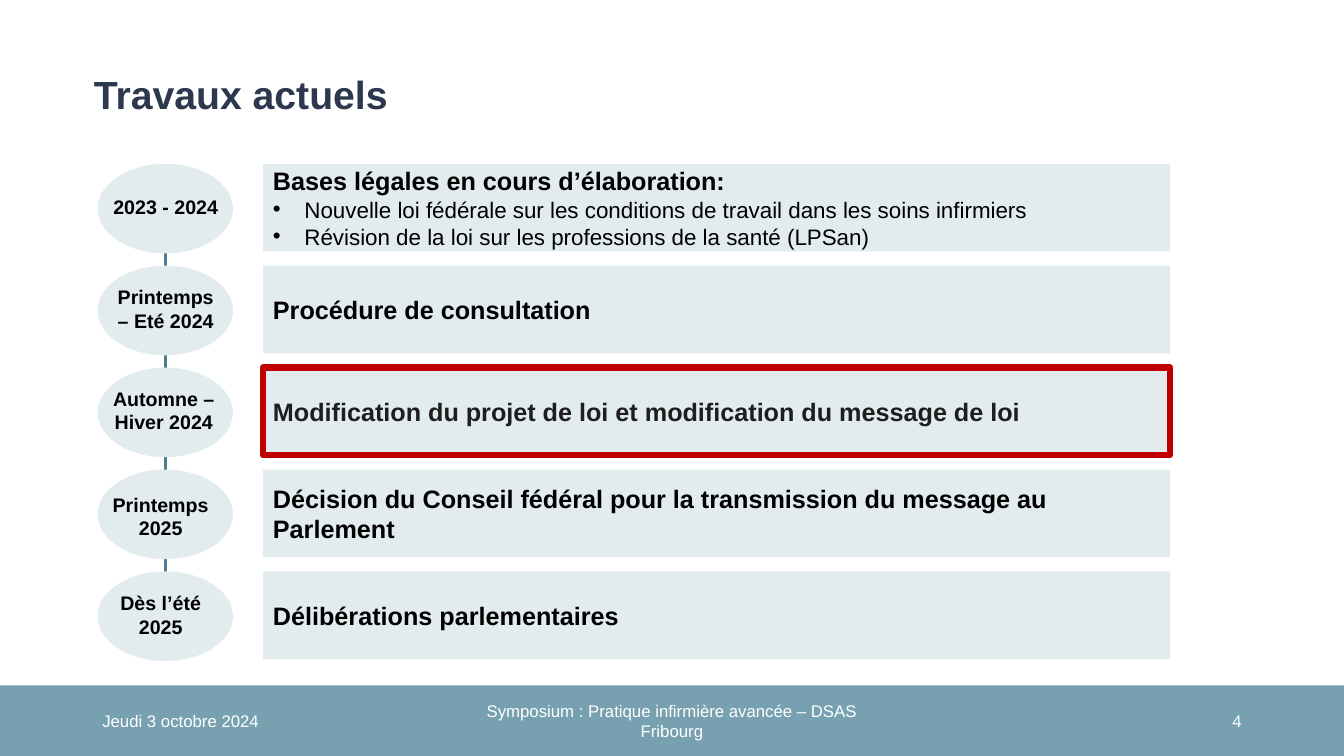
import pptx
import pptx.util
import pptx.dml.color
import pptx.enum.shapes
import pptx.enum.text
import pptx.oxml.ns
from lxml import etree

Pt = pptx.util.Pt
RGB = pptx.dml.color.RGBColor
Kind = pptx.enum.shapes.MSO_SHAPE
Align = pptx.enum.text.PP_ALIGN
Anchor = pptx.enum.text.MSO_ANCHOR
qn = pptx.oxml.ns.qn

# Content
TITLE = "Travaux actuels"
LAWS = [
    "Nouvelle loi fédérale sur les conditions de travail dans les soins infirmiers",
    "Révision de la loi sur les professions de la santé (LPSan)",
]
# date, label left, label offset in step, heading, bullets
STEPS = [
    ("2023 - 2024", 73.4, 19, "Bases légales en cours d’élaboration:", LAWS),
    ("Printemps – Eté 2024", 73.4, 10.2, "Procédure de consultation", []),
    ("Automne – Hiver 2024", 72, 10.2,
     "Modification du projet de loi et modification du message de loi", []),
    ("Printemps 2025", 69.8, 13,
     "Décision du Conseil fédéral pour la transmission du message au Parlement", []),
    ("Dès l’été 2025", 69.8, 10.6, "Délibérations parlementaires", []),
]
NOW = 2
FOOT = [
    ("Jeudi 3 octobre 2024", 66, 216, Align.LEFT),
    ("Symposium : Pratique infirmière avancée – DSAS Fribourg", 318, 324, Align.CENTER),
    ("4", 678, 216, Align.RIGHT),
]

# Colours
NAVY = RGB(0x2D, 0x38, 0x4F)
BAR = RGB(0x77, 0xA0, 0xB0)
PALE = RGB(0xE2, 0xEB, 0xEE)
TEAL = RGB(0x51, 0x7C, 0x8D)
RED = RGB(0xC0, 0x00, 0x00)
BLACK = RGB(0, 0, 0)
DARK = RGB(0x1E, 0x1E, 0x1E)
WHITE = RGB(0xFF, 0xFF, 0xFF)

# Text formats
HEAD = {"size": Pt(28), "bold": True}
STEP = {"size": Pt(18), "bold": True}
ITEM = {"size": Pt(16), "bold": False}
DATE = {"size": Pt(14), "bold": True}
NOTE = {"size": Pt(12), "bold": False}

# Layout
WIDE, HIGH = 960, 540
TOP, PITCH = 117, 72.8
OVAL_X, OVAL_W, OVAL_H = 69.8, 96.6, 64
BOX_X, BOX_W, BOX_H = 187.9, 648, 62.6
BAR_Y = 489.6
INDENT = 22.5


def style(para, form, color, align=Align.LEFT):
    para.alignment = align
    for key, val in {"name": "Arial", **form}.items():
        setattr(para.font, key, val)
    para.font.color.rgb = color


def setup(frame, anchor):
    form = {"word_wrap": True, "vertical_anchor": anchor,
            "auto_size": pptx.enum.text.MSO_AUTO_SIZE.NONE,
            "margin_left": Pt(7.2), "margin_right": Pt(7.2),
            "margin_top": Pt(3.6), "margin_bottom": Pt(3.6)}
    for key, val in form.items():
        setattr(frame, key, val)


def shape(slide, kind, area, fill=None, line=None):
    part = slide.shapes.add_shape(kind, *map(Pt, area))
    part.shadow.inherit = False
    if fill is None:
        part.fill.background()
    else:
        part.fill.solid()
        part.fill.fore_color.rgb = fill
    if line is None:
        part.line.fill.background()
    else:
        part.line.color.rgb = line
        part.line.width = Pt(4.5)
    return part


def label(slide, text, area, form, color, align, anchor):
    frame = slide.shapes.add_textbox(*map(Pt, area)).text_frame
    setup(frame, anchor)
    frame.text = text
    style(frame.paragraphs[0], form, color, align)


def bullet(para):
    props = para._p.get_or_add_pPr()
    props.set("marL", str(Pt(INDENT)))
    props.set("indent", str(-Pt(INDENT)))
    etree.SubElement(props, qn("a:buFont")).set("typeface", "Arial")
    etree.SubElement(props, qn("a:buChar")).set("char", "•")


def main():
    deck = pptx.Presentation()
    deck.slide_width, deck.slide_height = Pt(WIDE), Pt(HIGH)
    slide = deck.slides.add_slide(deck.slide_layouts[5])

    # Title
    title = slide.shapes.title
    title.left, title.top, title.width, title.height = map(Pt, (59.8, 50.4, 849.6, 30.2))
    setup(title.text_frame, Anchor.TOP)
    title.text_frame.text = TITLE
    para = title.text_frame.paragraphs[0]
    style(para, HEAD, NAVY)
    para.line_spacing = 0.9

    # Footer
    shape(slide, Kind.RECTANGLE, (0, BAR_Y, WIDE, HIGH - BAR_Y), BAR)
    for text, left, width, align in FOOT:
        label(slide, text, (left, 500.4, width, 28.8), NOTE, WHITE, align, Anchor.MIDDLE)

    # Line behind the ovals
    mid = OVAL_X + OVAL_W / 2
    last = TOP + PITCH * (len(STEPS) - 1)
    link = slide.shapes.add_connector(
        pptx.enum.shapes.MSO_CONNECTOR.STRAIGHT,
        Pt(mid), Pt(TOP + OVAL_H), Pt(mid), Pt(last + OVAL_H / 2))
    link.line.color.rgb = TEAL
    link.line.width = Pt(2.25)
    etree.SubElement(link._element.spPr, qn("a:effectLst"))

    # Steps
    for num, (date, left, drop, head, items) in enumerate(STEPS):
        top = TOP + PITCH * num
        area = (BOX_X, top, BOX_W, BOX_H)
        shape(slide, Kind.OVAL, (OVAL_X, top, OVAL_W, OVAL_H), PALE)
        frame = shape(slide, Kind.RECTANGLE, area, PALE).text_frame
        setup(frame, Anchor.MIDDLE)
        frame.text = head
        style(frame.paragraphs[0], STEP, DARK if num == NOW else BLACK)
        if not items:
            frame.paragraphs[0].space_after = Pt(6)
        for item in items:
            para = frame.add_paragraph()
            para.text = item
            bullet(para)
            style(para, ITEM, BLACK)
        if num == NOW:
            shape(slide, Kind.RECTANGLE, area, line=RED)
        label(slide, date, (left, top + drop, 90, 36), DATE, BLACK,
              Align.CENTER, Anchor.TOP)

    deck.save("out.pptx")


if __name__ == "__main__":
    main()
